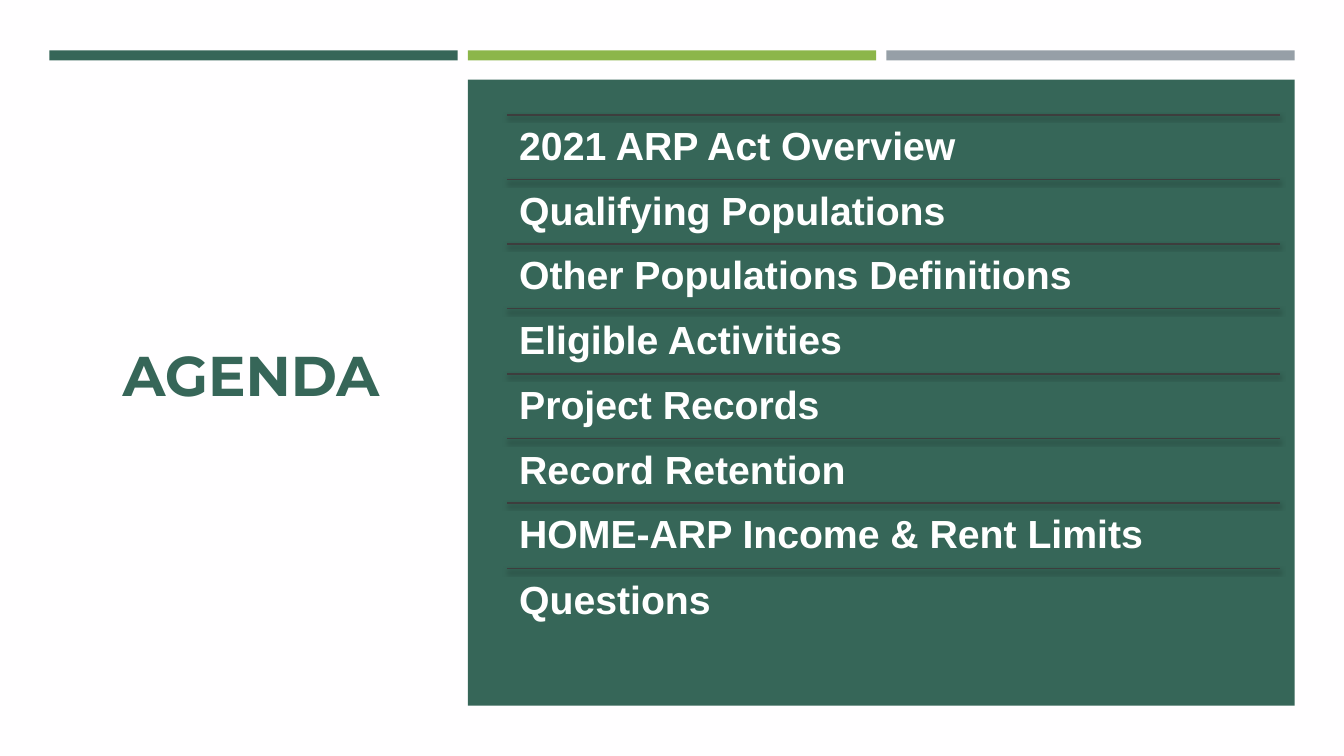
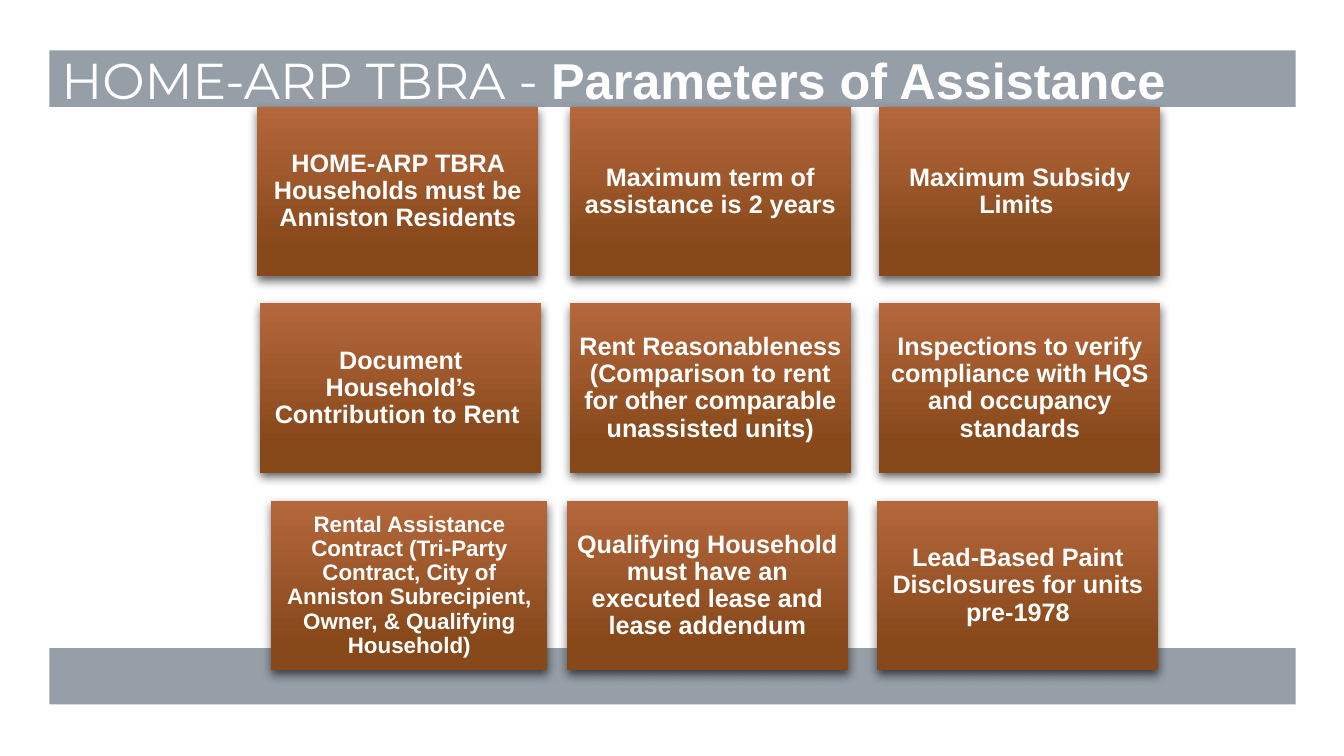
from lxml import etree
from pptx import Presentation
from pptx.dml.color import RGBColor
from pptx.enum.shapes import MSO_CONNECTOR, MSO_SHAPE
from pptx.enum.text import MSO_ANCHOR, PP_ALIGN
from pptx.oxml.ns import qn

RECT = MSO_SHAPE.RECTANGLE
LINE = MSO_CONNECTOR.STRAIGHT
TOP, MIDDLE = MSO_ANCHOR.TOP, MSO_ANCHOR.MIDDLE
LEFT, CENTER = PP_ALIGN.LEFT, PP_ALIGN.CENTER

PX, PT, DEGREE = 9144, 12700, 60000
SLIDE_W, SLIDE_H = 1333, 750
GREEN, LIME, GRAY = "366658", "8CB64A", "969FA7"
WHITE, OFF_WHITE, RULE = "FFFFFF", "FFFEFF", "3D3D3D"
TILE_TOP, TILE_BOTTOM = "B4673B", "87481A"
HEAD_FONT, BODY_FONT = "Montserrat", "Arial"
BODY = {"name": BODY_FONT, "bold": True}

AGENDA = [
    "2021 ARP Act Overview",
    "Qualifying Populations",
    "Other Populations Definitions",
    "Eligible Activities",
    "Project Records",
    "Record Retention",
    "HOME-ARP Income & Rent Limits",
    "Questions",
]

TILE_W, TILE_H = 279, 168
PARAMETERS = [
    [
        (0, TILE_W, 18, "HOME-ARP TBRA Households must be Anniston Residents"),
        (310, TILE_W, 18, "Maximum term of assistance is 2 years"),
        (617, TILE_W, 18, "Maximum Subsidy Limits "),
    ],
    [
        (3, TILE_W, 18, "Document Household’s Contribution to Rent "),
        (310, TILE_W, 18, "Rent Reasonableness (Comparison to rent for other "
                          "comparable unassisted units)"),
        (617, TILE_W, 18, "Inspections to verify compliance with HQS and "
                          "occupancy standards"),
    ],
    [
        (14, 274, 16, "Rental Assistance Contract (Tri-Party Contract, City of "
                      "Anniston Subrecipient, Owner, & Qualifying Household)"),
        (307, TILE_W, 18, "Qualifying Household must have an executed lease "
                          "and lease addendum"),
        (615, TILE_W, 18, "Lead-Based Paint Disclosures for units pre-1978"),
    ],
]


def rgb(value):
    return RGBColor.from_string(value)


def emu(*lengths):
    return [n * PX for n in lengths]


def set_shadow(shape, alpha, blur, dist, angle):
    spPr = shape._element.spPr
    effects = spPr.find(qn("a:effectLst"))
    if effects is None:
        effects = etree.SubElement(spPr, qn("a:effectLst"))
    outer = etree.SubElement(effects, qn("a:outerShdw"), {
        "blurRad": str(blur * PT), "dist": str(dist * PT),
        "dir": str(angle * DEGREE), "algn": "ctr", "rotWithShape": "0"})
    color = etree.SubElement(outer, qn("a:srgbClr"), val="000000")
    etree.SubElement(color, qn("a:alpha"), val=str(alpha * 1000))


def write(shape, runs, size, color=WHITE, align=LEFT, anchor=TOP,
          inset=(10, 5), spacing=None):
    tf = shape.text_frame
    x, y = emu(*inset)
    frame = {"word_wrap": True, "vertical_anchor": anchor, "margin_left": x,
             "margin_right": x, "margin_top": y, "margin_bottom": y}
    for key, value in frame.items():
        setattr(tf, key, value)
    p = tf.paragraphs[0]
    p.alignment = align
    if spacing:
        p.line_spacing = spacing
    for text, fmt in runs:
        r = p.add_run()
        r.text = text
        r.font.size = size * PT
        r.font.color.rgb = rgb(color)
        for key, value in fmt.items():
            setattr(r.font, key, value)


def add_text(s, box, runs, size, **options):
    shape = s.shapes.add_textbox(*emu(*box))
    write(shape, runs, size, **options)


def add_rect(s, box, color=None):
    shape = s.shapes.add_shape(RECT, *emu(*box))
    shape.shadow.inherit = False
    shape.line.fill.background()
    if color:
        shape.fill.solid()
        shape.fill.fore_color.rgb = rgb(color)
    return shape


def add_slide(prs, background):
    s = prs.slides.add_slide(prs.slide_layouts[6])
    s.background.fill.solid()
    s.background.fill.fore_color.rgb = rgb(background)
    return s


def add_top_bars(s, box):
    x, y, w, h = box
    gap = 10
    bar_w = (w - 2 * gap) // 3
    for i, color in enumerate((GREEN, LIME, GRAY)):
        add_rect(s, (x + i * (bar_w + gap), y, bar_w, h), color)


def add_agenda_panel(s, box, items):
    x, y, w, h = box
    add_rect(s, box, GREEN)
    left, top, width, row_h = x + 39, y + 35, w - 53, 64
    for i, item in enumerate(items):
        row_y = top + i * 643 // 10
        rule = s.shapes.add_connector(
            LINE, *emu(left, row_y, left + width, row_y))
        rule.line.color.rgb = rgb(RULE)
        rule.line.width = PT
        set_shadow(rule, 55, 3, 2, 90)
        add_text(s, (left, row_y, width, row_h), [(item, BODY)], 28,
                 inset=(12, 12), spacing=0.9)


def add_tile(s, box, text, size):
    tile = add_rect(s, box)
    tile.fill.gradient()
    tile.fill.gradient_angle = 270
    stops = ((0, TILE_TOP), (0.84, TILE_BOTTOM))
    for stop, (position, color) in zip(tile.fill.gradient_stops, stops):
        stop.position = position
        stop.color.rgb = rgb(color)
    set_shadow(tile, 60, 7, 3, 84)
    write(tile, [(text, BODY)], size, align=CENTER, anchor=MIDDLE,
          inset=(7, 7), spacing=0.9)


def add_tiles(s, x, y, rows):
    for i, row in enumerate(rows):
        for dx, w, size, text in row:
            add_tile(s, (x + dx, y + i * 391 // 2, w, TILE_H), text, size)


def add_bands(s, box, band_h):
    x, y, w, h = box
    for band_y in (y, y + h - band_h):
        add_rect(s, (x, band_y, w, band_h), GRAY)


def agenda_slide(prs):
    s = add_slide(prs, OFF_WHITE)
    add_text(s, (82, 114, 334, 515),
             [("AGENDA", {"name": HEAD_FONT, "bold": True})], 40,
             color=GREEN, align=CENTER, anchor=MIDDLE)
    add_top_bars(s, (49, 50, 1235, 10))
    add_agenda_panel(s, (464, 79, 820, 621), AGENDA)


def parameters_slide(prs):
    s = add_slide(prs, WHITE)
    add_bands(s, (49, 50, 1236, 649), 56)
    add_text(s, (51, 44, 1234, 71),
             [("HOME-ARP TBRA - ", {"name": HEAD_FONT}),
              ("Parameters of Assistance", BODY)], 36)
    add_tiles(s, 255, 106, PARAMETERS)


def main():
    prs = Presentation()
    prs.slide_width, prs.slide_height = emu(SLIDE_W, SLIDE_H)
    agenda_slide(prs)
    parameters_slide(prs)
    prs.save("out.pptx")


if __name__ == "__main__":
    main()
